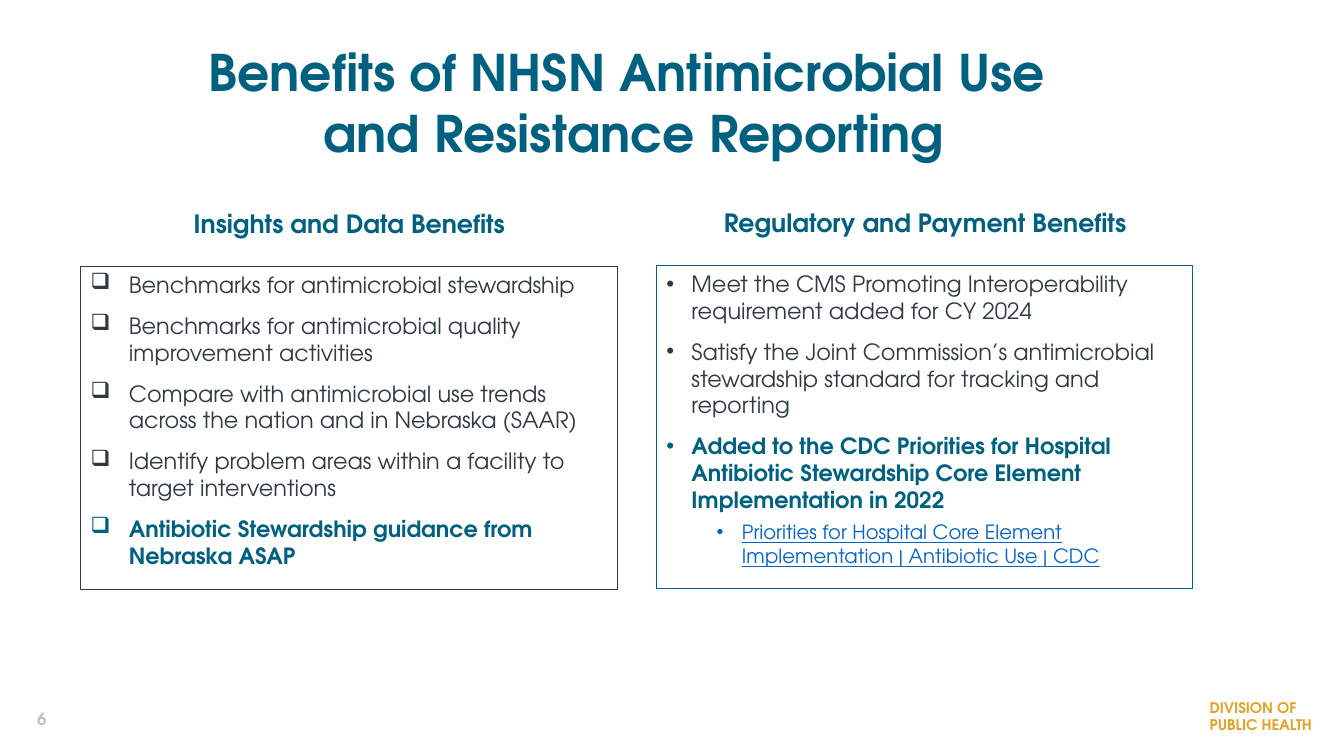
from lxml import etree
from pptx import Presentation
from pptx.dml.color import RGBColor
from pptx.enum.shapes import MSO_SHAPE
from pptx.enum.text import MSO_ANCHOR, PP_ALIGN
from pptx.oxml.ns import qn
from pptx.util import Inches, Pt

TEAL = RGBColor(0x00, 0x60, 0x7F)
SLATE = RGBColor(0x30, 0x3B, 0x41)
GOLD = RGBColor(0xE2, 0xA3, 0x25)
GRAY = RGBColor(0xBF, 0xBF, 0xBF)
LINK_BLUE = RGBColor(0x05, 0x63, 0xC1)

FONT = "TeX Gyre Adventor"
RECTANGLE = MSO_SHAPE.RECTANGLE
LEFT, CENTER = PP_ALIGN.LEFT, PP_ALIGN.CENTER
TOP, MIDDLE = MSO_ANCHOR.TOP, MSO_ANCHOR.MIDDLE

KEY = {"color": TEAL, "bold": True}
SUBITEM = {"color": LINK_BLUE, "size": 14, "underline": True,
           "level": 1, "margin": 0.75, "before": 5}

INSIGHTS = [
    ("Benchmarks for antimicrobial stewardship", {}),
    ("Benchmarks for antimicrobial quality improvement activities", {}),
    ("Compare with antimicrobial use trends across the nation and in Nebraska (SAAR)", {}),
    ("Identify problem areas within a facility to target interventions", {}),
    ("Antibiotic Stewardship guidance from Nebraska ASAP", KEY),
]
REGULATORY = [
    ("Meet the CMS Promoting Interoperability requirement added for CY 2024", {}),
    ("Satisfy the Joint Commission’s antimicrobial stewardship standard "
     "for tracking and reporting", {}),
    ("Added to the CDC Priorities for Hospital Antibiotic Stewardship "
     "Core Element Implementation in 2022", KEY),
    ("Priorities for Hospital Core Element Implementation | Antibiotic Use | CDC", SUBITEM),
]


def add_bullet(para, character, font, margin, hanging):
    properties = para._p.get_or_add_pPr()
    properties.set("marL", str(Inches(margin)))
    properties.set("indent", str(-Inches(hanging)))
    etree.SubElement(properties, qn("a:buFont")).set("typeface", font)
    etree.SubElement(properties, qn("a:buChar")).set("char", character)


def write(para, text, size=16, color=SLATE, bold=False, underline=False,
          align=LEFT, before=0, level=0):
    para.alignment = align
    para.space_before = Pt(before)
    para.level = level
    span = para.add_run()
    span.text = text
    span.font.name = FONT
    span.font.size = Pt(size)
    span.font.color.rgb = color
    span.font.bold = bold
    span.font.underline = underline


def next_paragraph(frame, index):
    return frame.add_paragraph() if index else frame.paragraphs[0]


def add_text(page, box, lines, anchor=TOP, inset=True, **style):
    frame = page.shapes.add_textbox(*map(Inches, box)).text_frame
    frame.word_wrap = True
    frame.vertical_anchor = anchor
    if not inset:
        frame.margin_left = frame.margin_right = 0
        frame.margin_top = frame.margin_bottom = 0
    for index, line in enumerate(lines):
        write(next_paragraph(frame, index), line, **style)


def add_benefits(page, box, items, line_color, bullet, bullet_font, hanging):
    """Draw an outlined panel holding a bulleted list."""
    panel = page.shapes.add_shape(RECTANGLE, *map(Inches, box))
    panel.shadow.inherit = False
    panel.fill.background()
    panel.line.color.rgb = line_color
    panel.line.width = Pt(0.75)
    frame = panel.text_frame
    frame.word_wrap = True
    frame.vertical_anchor = TOP
    for index, (text, extra) in enumerate(items):
        style = {"before": 10 if index else 0, **extra}
        margin = style.pop("margin", hanging)
        para = next_paragraph(frame, index)
        write(para, text, **style)
        add_bullet(para, bullet, bullet_font, margin, hanging)


def add_heading(page, box, text):
    add_text(page, box, [text], size=18, color=TEAL, bold=True, align=CENTER)


def add_footer(page):
    add_text(page, (0.27, 6.93, 3, 0.4), ["6"], anchor=MIDDLE,
             size=12, color=GRAY, bold=True)
    add_text(page, (11.9, 6.88, 1.43, 0.45), ["DIVISION OF", "PUBLIC HEALTH"],
             size=10.5, color=GOLD, bold=True)


def main():
    deck = Presentation()
    deck.slide_width, deck.slide_height = Inches(13.33), Inches(7.5)
    page = deck.slides.add_slide(deck.slide_layouts[6])
    add_text(page, (0.62, 0.41, 11.33, 1.57),
             ["Benefits of NHSN Antimicrobial Use ", "and Resistance Reporting"],
             inset=False, size=36, color=TEAL, bold=True, align=CENTER)
    add_heading(page, (0.13, 2.02, 6.67, 0.4), "Insights and Data Benefits")
    add_heading(page, (5.84, 2.01, 6.67, 0.4), "Regulatory and Payment Benefits")
    add_benefits(page, (0.8, 2.64, 5.32, 3.21), INSIGHTS, SLATE, "q", "Wingdings", 0.38)
    add_benefits(page, (6.51, 2.63, 5.32, 3.21), REGULATORY, TEAL, "•", "Arial", 0.25)
    add_footer(page)
    deck.save("out.pptx")


if __name__ == "__main__":
    main()
